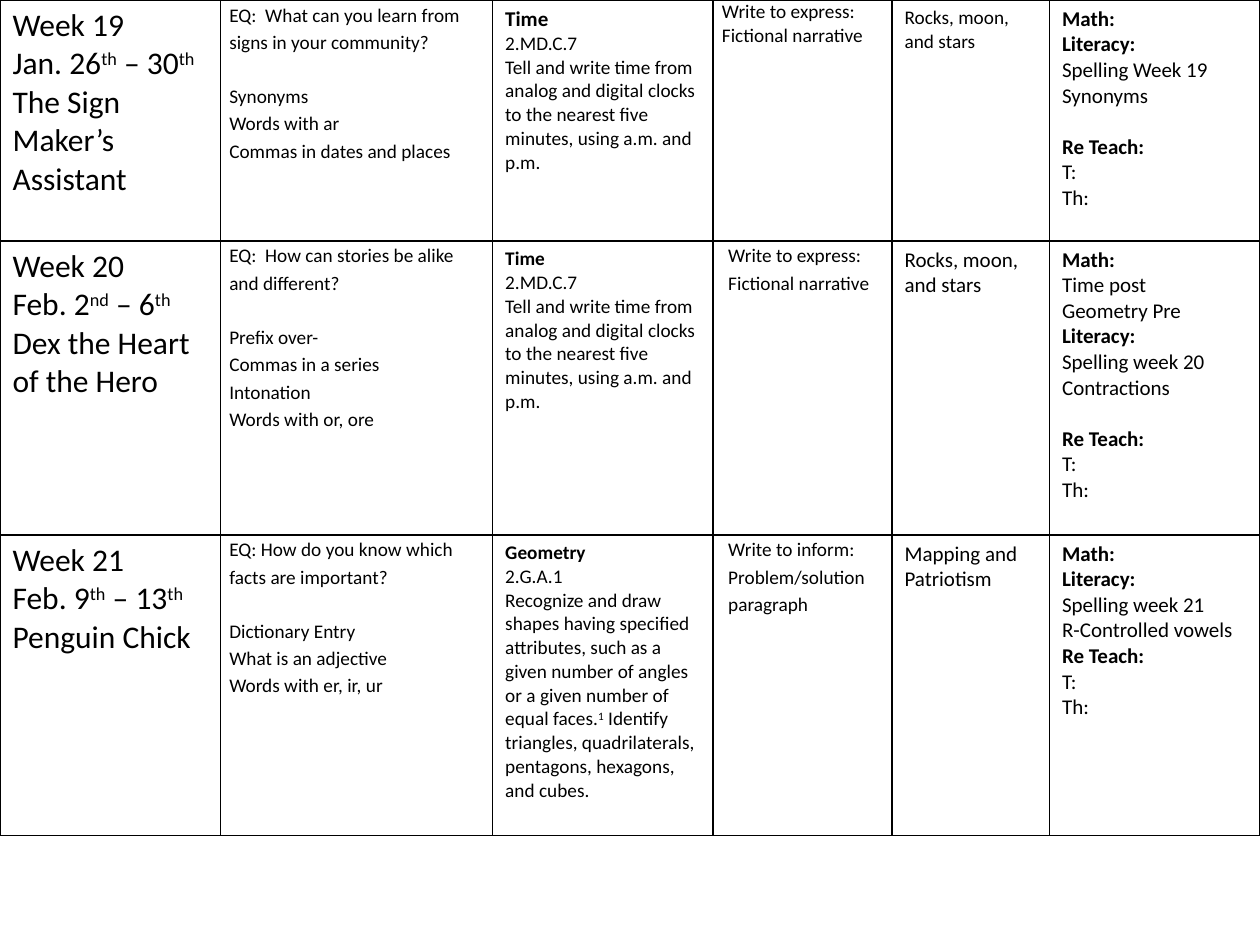
from dataclasses import dataclass, replace

from lxml import etree
from pptx import Presentation, util as u
from pptx.dml.color import RGBColor
from pptx.oxml.ns import qn

INK, PAPER, FONT = "000000", "FFFFFF", "Calibri"
COLUMNS = [0.175, 0.216, 0.175, 0.142, 0.125, 0.167]  # shares of slide width
ROWS = [0.255, 0.311, 0.318]  # shares of slide height


def colour(value):
    return RGBColor.from_string(value)


@dataclass
class CellStyle:
    size: float = 11
    spacing: float = 1.0
    after: float = 0
    side: float = 0.1
    edge: float = 0.05
    heading: float = 0  # size of bold lines, 0 for the same as the rest


WEEK = CellStyle(size=18)
READING = CellStyle(spacing=1.15, side=0.07, edge=0)
MATH = CellStyle()
WRITING = CellStyle(spacing=1.15, after=10, side=0.12, edge=0)
SCIENCE = CellStyle(size=12)
TESTS = CellStyle(size=12)
STYLES = [
    [WEEK, READING, replace(MATH, heading=12), CellStyle(side=0.07, edge=0),
     replace(SCIENCE, size=11), TESTS],
    [WEEK, READING, MATH, WRITING, SCIENCE, TESTS],
    [WEEK, READING, MATH, WRITING, SCIENCE, TESTS],
]

TIME = ["#Time", "2.MD.C.7",
        "Tell and write time from analog and digital clocks to the nearest "
        "five minutes, using a.m. and p.m."]
NARRATIVE = ["Write to express: Fictional narrative"]
ROCKS = ["Rocks, moon, and stars"]
RETEACH = ["#Re Teach:", "T:", "Th:"]

# A cell is a list of groups of lines; "#" marks a bold line, "^" encloses superscript.
WEEKS = [
    [
        [["Week 19", "Jan. 26^th^ – 30^th^", "The Sign Maker’s Assistant"]],
        [["EQ:  What can you learn from signs in your community?"],
         ["Synonyms", "Words with ar", "Commas in dates and places"]],
        [TIME], [NARRATIVE], [ROCKS],
        [["#Math:", "#Literacy:", "Spelling Week 19", "Synonyms"], RETEACH],
    ],
    [
        [["Week 20", "Feb. 2^nd^ – 6^th^", "Dex the Heart of the Hero"]],
        [["EQ:  How can stories be alike and different?"],
         ["Prefix over-", "Commas in a series", "Intonation", "Words with or, ore"]],
        [TIME], [NARRATIVE], [ROCKS],
        [["#Math:", "Time post", "Geometry Pre", "#Literacy:",
          "Spelling week 20", "Contractions"], RETEACH],
    ],
    [
        [["Week 21", "Feb. 9^th^ – 13^th^", "Penguin Chick"]],
        [["EQ: How do you know which facts are important?"],
         ["Dictionary Entry", "What is an adjective", "Words with er, ir, ur"]],
        [["#Geometry", "2.G.A.1",
          "Recognize and draw shapes having specified attributes, such as a given "
          "number of angles or a given number of equal faces.^1^ Identify triangles, "
          "quadrilaterals, pentagons, hexagons, and cubes."]],
        [["Write to inform: Problem/solution paragraph"]],
        [["Mapping and Patriotism"]],
        [["#Math:", "#Literacy:", "Spelling week 21", "R-Controlled vowels", *RETEACH]],
    ],
]


class Planner:
    def __init__(self, deck):
        self.width, self.height = deck.slide_width, deck.slide_height
        self.slide = deck.slides.add_slide(deck.slide_layouts[6])

    def table(self, weeks, styles):
        frame = self.slide.shapes.add_table(
            len(ROWS), len(COLUMNS), 0, 0, self.width, int(self.height * sum(ROWS)))
        plan = frame.table
        plan.first_row = plan.horz_banding = False
        for column, share in zip(plan.columns, COLUMNS):
            column.width = int(self.width * share)
        for row, share, week, row_styles in zip(plan.rows, ROWS, weeks, styles):
            row.height = int(self.height * share)
            for cell, groups, style in zip(row.cells, week, row_styles):
                self.cell(cell, groups, style)

    def cell(self, cell, groups, style):
        cell.margin_left = cell.margin_right = u.Inches(style.side)
        cell.margin_top = cell.margin_bottom = u.Inches(style.edge)
        self.borders(cell)
        cell.fill.solid()
        cell.fill.fore_color.rgb = colour(PAPER)
        paragraph = None
        for group in groups:
            for line in group:
                starts_group = paragraph is not None and line is group[0]
                paragraph = (cell.text_frame.add_paragraph() if paragraph is not None
                             else cell.text_frame.paragraphs[0])
                self.line(paragraph, line, style)
                if starts_group:  # leave one line's height between groups
                    paragraph.space_before = u.Pt(
                        round(style.size * style.spacing * 1.22, 1))

    def line(self, paragraph, line, style):
        bold = line.startswith("#")
        paragraph.line_spacing = style.spacing
        paragraph.space_after = u.Pt(style.after)
        font = paragraph.font
        font.name, font.bold = FONT, bold
        font.size = u.Pt(style.heading if bold and style.heading else style.size)
        font.color.rgb = colour(INK)
        for index, part in enumerate(line.removeprefix("#").split("^")):
            if part:
                run = paragraph.add_run()
                run.text = part
                if index % 2:
                    run.font._element.set("baseline", "30000")

    def borders(self, cell):
        properties = cell._tc.get_or_add_tcPr()
        for side in ("lnL", "lnR", "lnT", "lnB"):
            border = etree.SubElement(properties, qn(f"a:{side}"), w=str(u.Pt(1)))
            fill = etree.SubElement(border, qn("a:solidFill"))
            etree.SubElement(fill, qn("a:srgbClr"), val=INK)


def main():
    deck = Presentation()
    deck.slide_width, deck.slide_height = u.Inches(10), u.Inches(7.5)
    Planner(deck).table(WEEKS, STYLES)
    deck.save("out.pptx")


if __name__ == "__main__":
    main()
